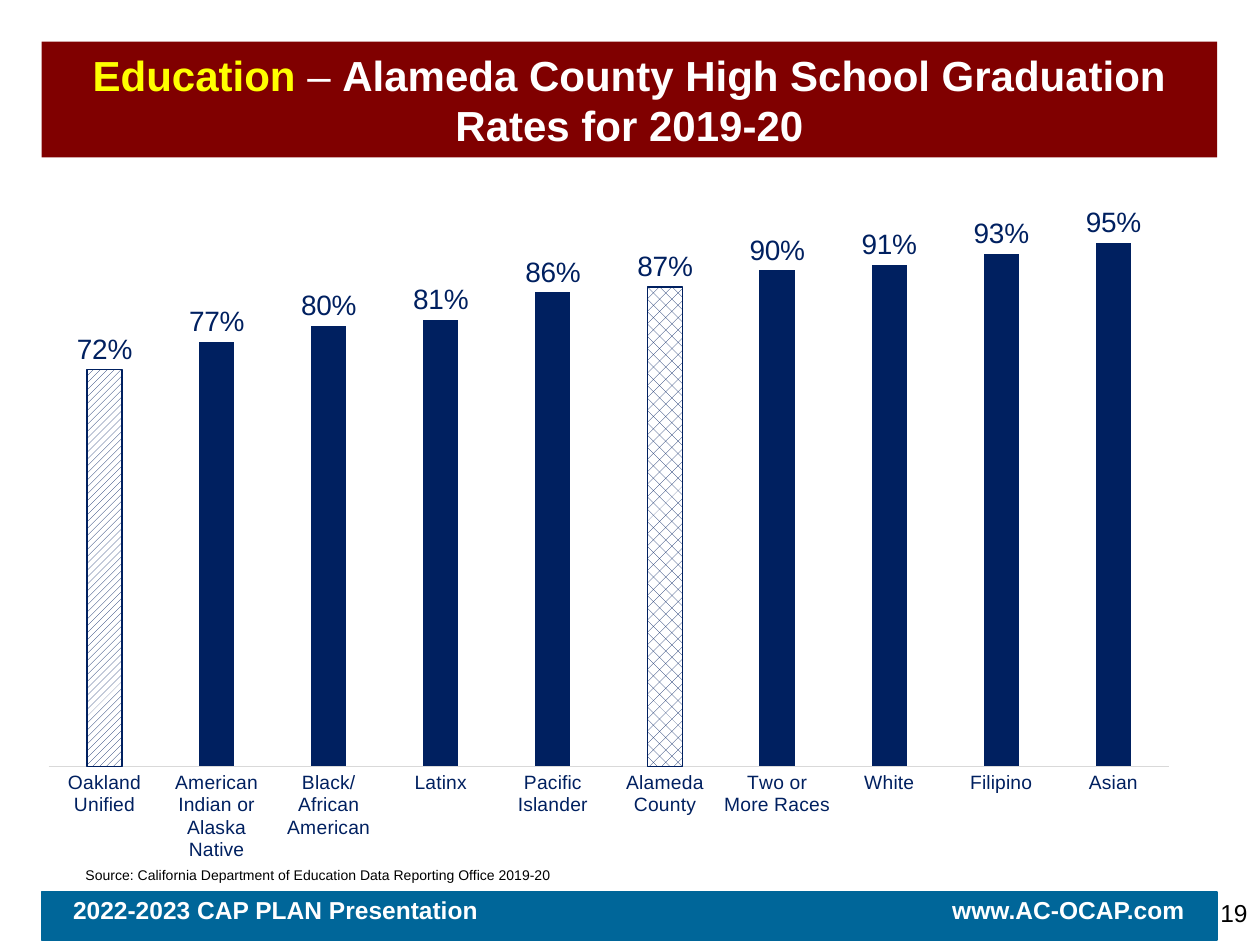
from dataclasses import dataclass

import pptx
import pptx.chart.data
import pptx.dml.color
import pptx.enum.chart
import pptx.enum.dml
import pptx.enum.shapes
import pptx.enum.text
import pptx.oxml
import pptx.oxml.ns
import pptx.util
from pptx.util import Inches

ALIGN = pptx.enum.text.PP_ALIGN
ANCHOR = pptx.enum.text.MSO_ANCHOR
PATTERN = pptx.enum.dml.MSO_PATTERN


@dataclass(frozen=True)
class Theme:
    font: str = "Arial"
    maroon: str = "800000"
    yellow: str = "FFFF00"
    white: str = "FFFFFF"
    black: str = "000000"
    navy: str = "002060"
    teal: str = "006699"
    grey: str = "D9D9D9"
    title: int = 24
    value: int = 16
    footer: int = 14
    category: int = 11
    source: int = 8


THEME = Theme()

GRADUATION_RATES = {
    "Oakland Unified": 0.72,
    "American Indian or Alaska Native": 0.77,
    "Black/African American": 0.80,
    "Latinx": 0.81,
    "Pacific Islander": 0.86,
    "Alameda County": 0.87,
    "Two or More Races": 0.90,
    "White": 0.91,
    "Filipino": 0.93,
    "Asian": 0.95,
}
HATCHED_BARS = {
    "Oakland Unified": PATTERN.WIDE_UPWARD_DIAGONAL,
    "Alameda County": PATTERN.PERCENT_30,
}
PLOT_AREA = {"x": 0.006, "y": 0.032, "w": 0.966, "h": 0.827}


def rgb(color):
    return pptx.dml.color.RGBColor.from_string(color)


def format_font(font, size, color, bold=False):
    font.name = THEME.font
    font.size = pptx.util.Pt(size)
    font.bold = bold
    font.color.rgb = rgb(color)


def add_text(para, text, size=THEME.footer, color=THEME.black, bold=False):
    span = para.add_run()
    span.text = text
    format_font(span.font, size, color, bold)


def fill_solid(shape, color):
    shape.fill.solid()
    shape.fill.fore_color.rgb = rgb(color)


def add_title(page):
    title = page.shapes.title
    title.left, title.top = Inches(0.33), Inches(0.33)
    title.width, title.height = Inches(9.33), Inches(0.92)
    fill_solid(title, THEME.maroon)
    frame = title.text_frame
    frame.auto_size = pptx.enum.text.MSO_AUTO_SIZE.NONE
    frame.vertical_anchor = ANCHOR.MIDDLE
    para = frame.paragraphs[0]
    para.alignment = ALIGN.CENTER
    add_text(para, "Education", size=THEME.title, color=THEME.yellow, bold=True)
    add_text(para, " – ", size=THEME.title, color=THEME.white)
    add_text(para, "Alameda County High School Graduation Rates for 2019-20",
             size=THEME.title, color=THEME.white, bold=True)


def add_label(page, text, left, top, width, height, align=ALIGN.LEFT, **style):
    box = page.shapes.add_textbox(Inches(left), Inches(top), Inches(width), Inches(height))
    box.text_frame.word_wrap = True
    para = box.text_frame.paragraphs[0]
    para.alignment = align
    add_text(para, text, **style)


def add_right_tab(para, position):
    stops = pptx.oxml.parse_xml(
        f'<a:tabLst {pptx.oxml.ns.nsdecls("a")}><a:tab pos="{position}" algn="r"/></a:tabLst>')
    para._p.get_or_add_pPr().append(stops)


def add_footer(page):
    bar = page.shapes.add_shape(pptx.enum.shapes.MSO_SHAPE.RECTANGLE,
                                Inches(0.33), Inches(7.08), Inches(9.33), Inches(0.38))
    bar.shadow.inherit = False
    fill_solid(bar, THEME.teal)
    bar.line.color.rgb = rgb(THEME.teal)
    bar.line.width = pptx.util.Pt(0.75)
    frame = bar.text_frame
    frame.word_wrap = True
    frame.vertical_anchor = ANCHOR.TOP
    frame.margin_left = frame.margin_right = Inches(0.25)
    para = frame.paragraphs[0]
    para.alignment = ALIGN.LEFT
    para.line_spacing = 0.9
    add_right_tab(para, Inches(8.82))
    add_text(para, "2022-2023 CAP PLAN Presentation\twww.AC-OCAP.com",
             color=THEME.white, bold=True)


def set_plot_area(chart):
    """Fix the inner plot area, as fractions of the chart."""
    sizes = "".join(f'<c:{key} val="{value}"/>' for key, value in PLOT_AREA.items())
    layout = pptx.oxml.parse_xml(
        f'<c:layout {pptx.oxml.ns.nsdecls("c")}><c:manualLayout>'
        '<c:layoutTarget val="inner"/><c:xMode val="edge"/><c:yMode val="edge"/>'
        f'{sizes}</c:manualLayout></c:layout>')
    plot_area = chart._chartSpace.chart.plotArea
    for old in plot_area.findall(pptx.oxml.ns.qn("c:layout")):
        plot_area.remove(old)
    plot_area.insert(0, layout)


def format_axes(chart):
    values = chart.value_axis
    values.minimum_scale, values.maximum_scale = 0, 1
    values.has_major_gridlines = False
    values.visible = False
    categories = chart.category_axis
    categories.major_tick_mark = pptx.enum.chart.XL_TICK_MARK.NONE
    categories.format.line.color.rgb = rgb(THEME.grey)
    categories.format.line.width = pptx.util.Pt(0.75)
    format_font(categories.tick_labels.font, THEME.category, THEME.navy)


def format_bars(plot):
    plot.gap_width, plot.overlap = 219, -27
    plot.vary_by_categories = False
    series = plot.series[0]
    series.invert_if_negative = False
    fill_solid(series.format, THEME.navy)
    names = list(GRADUATION_RATES)
    for name, pattern in HATCHED_BARS.items():
        bar = series.points[names.index(name)].format
        bar.fill.patterned()
        bar.fill.pattern = pattern
        bar.fill.fore_color.rgb = rgb(THEME.navy)
        bar.fill.back_color.rgb = rgb(THEME.white)
        bar.line.color.rgb = rgb(THEME.navy)
        bar.line.width = pptx.util.Pt(0.75)
    labels = series.data_labels
    labels.show_value = True
    labels.number_format, labels.number_format_is_linked = "0%", False
    labels.position = pptx.enum.chart.XL_LABEL_POSITION.OUTSIDE_END
    format_font(labels.font, THEME.value, THEME.navy)


def add_rate_chart(page):
    data = pptx.chart.data.CategoryChartData(number_format="0%")
    data.categories = list(GRADUATION_RATES)
    data.add_series("Series 1", list(GRADUATION_RATES.values()))
    chart = page.shapes.add_chart(
        pptx.enum.chart.XL_CHART_TYPE.COLUMN_CLUSTERED,
        Inches(0.33), Inches(1.54), Inches(9.21), Inches(5.29), data).chart
    chart.has_legend = False
    chart.has_title = False
    format_font(chart.font, 10, THEME.black)
    set_plot_area(chart)
    format_axes(chart)
    format_bars(chart.plots[0])


def main():
    deck = pptx.Presentation()
    deck.slide_width, deck.slide_height = Inches(10), Inches(7.5)
    page = deck.slides.add_slide(deck.slide_layouts.get_by_name("Title Only"))
    add_title(page)
    add_label(page, "Source: California Department of Education Data Reporting Office 2019-20",
              0.58, 6.83, 5.04, 0.22, size=THEME.source)
    add_label(page, "19", 9.38, 7.08, 0.62, 0.33, align=ALIGN.RIGHT)
    add_footer(page)
    add_rate_chart(page)
    deck.save("out.pptx")


if __name__ == "__main__":
    main()
